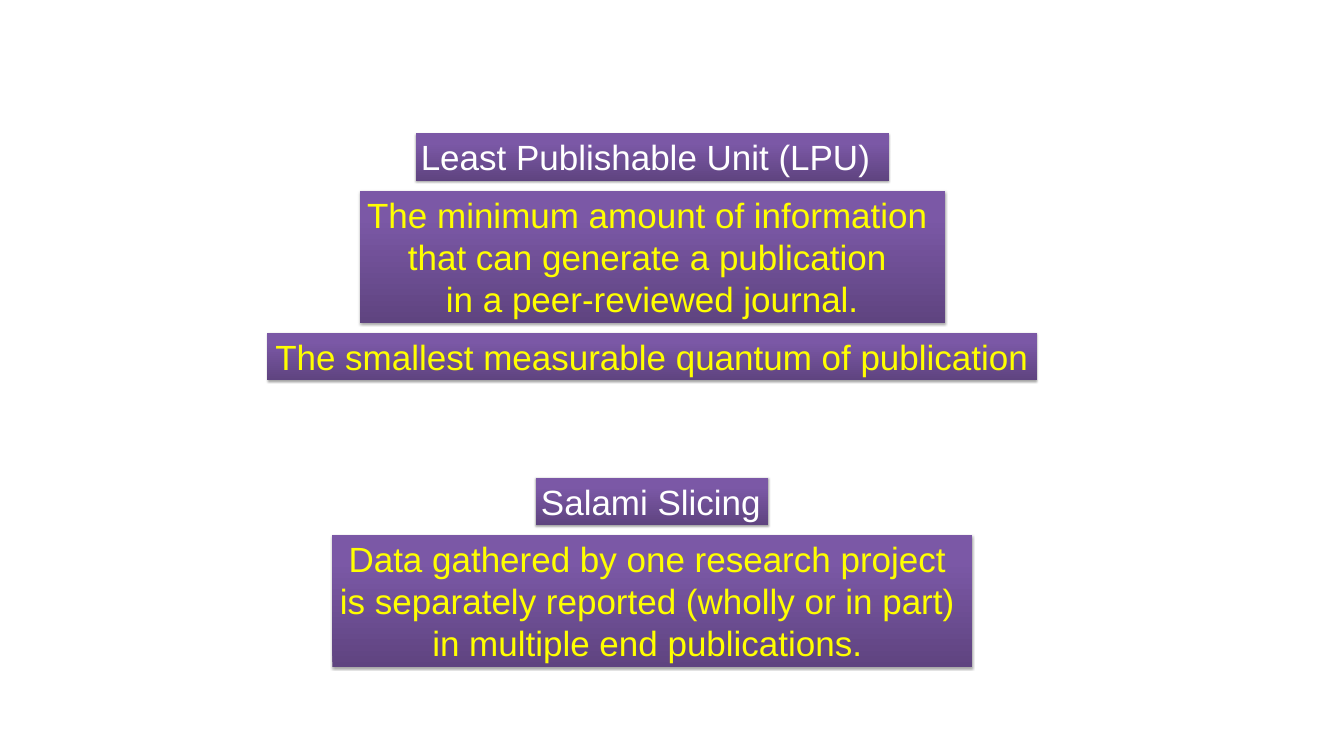
"""Build a slide that defines the least publishable unit and salami slicing."""
from copy import deepcopy

from lxml.etree import SubElement
from pptx import Presentation
from pptx.dml.color import RGBColor
from pptx.enum.shapes import MSO_SHAPE
from pptx.enum.text import MSO_ANCHOR, MSO_AUTO_SIZE, PP_ALIGN
from pptx.oxml.ns import qn
from pptx.util import Pt

PX = 9525
SLIDE_WIDTH, SLIDE_HEIGHT = 2560, 1440
CENTER_X, GAP = 1242, 19
HEIGHTS = {1: 90, 3: 252}
HEADING, BODY = "FFFFFF", "FFFF00"
GRADIENT = [(0, "5F4480"), (0.8, "7B58A6"), (1, "7C57A8")]

GROUPS = [
    (254, [
        (901, HEADING, ["Least Publishable Unit (LPU)"]),
        (1115, BODY, [
            "The minimum amount of information ",
            "that can generate a publication ",
            "in a peer-reviewed journal.",
        ]),
        (1466, BODY, ["The smallest measurable quantum of publication"]),
    ]),
    (910, [
        (442, HEADING, ["Salami Slicing"]),
        (1219, BODY, [
            "Data gathered by one research project ",
            "is separately reported (wholly or in part) ",
            "in multiple end publications. ",
        ]),
    ]),
]


def color(value):
    return RGBColor.from_string(value)


def fill_gradient(box):
    box.fill.gradient()
    box.fill.gradient_angle = 90
    stop_list = box.fill._xPr.find(qn("a:gradFill")).find(qn("a:gsLst"))
    stop_list.append(deepcopy(stop_list[-1]))
    for stop, (position, value) in zip(box.fill.gradient_stops, GRADIENT):
        stop.position = position
        stop.color.rgb = color(value)


def add_shadow(box):
    box.shadow.inherit = False
    effects = box._element.spPr.find(qn("a:effectLst"))
    shadow = SubElement(effects, qn("a:outerShdw"), blurRad=str(Pt(3.1)),
                        dist=str(Pt(1.8)), dir="5400000", rotWithShape="0")
    tint = SubElement(shadow, qn("a:srgbClr"), val="000000")
    SubElement(tint, qn("a:alpha"), val="35000")


def add_box(page, top, width, text_color, lines):
    height = HEIGHTS[len(lines)]
    left = CENTER_X - width // 2
    box = page.shapes.add_shape(MSO_SHAPE.RECTANGLE, left * PX, top * PX,
                                width * PX, height * PX)
    fill_gradient(box)
    box.line.fill.background()
    add_shadow(box)
    frame = box.text_frame
    frame.word_wrap = True
    frame.auto_size = MSO_AUTO_SIZE.NONE
    frame.vertical_anchor = MSO_ANCHOR.TOP
    frame.text = "\n".join(lines)
    for paragraph in frame.paragraphs:
        paragraph.alignment = PP_ALIGN.LEFT if text_color == HEADING else PP_ALIGN.CENTER
        paragraph.line_spacing = Pt(60)
        for span in paragraph.runs:
            span.font.name = "Arial"
            span.font.size = Pt(50)
            span.font.color.rgb = color(text_color)
    return top + height + GAP


def main():
    deck = Presentation()
    deck.slide_width, deck.slide_height = SLIDE_WIDTH * PX, SLIDE_HEIGHT * PX
    page = deck.slides.add_slide(deck.slide_layouts[6])
    for top, boxes in GROUPS:
        for width, text_color, lines in boxes:
            top = add_box(page, top, width, text_color, lines)
    deck.save("out.pptx")


if __name__ == "__main__":
    main()
